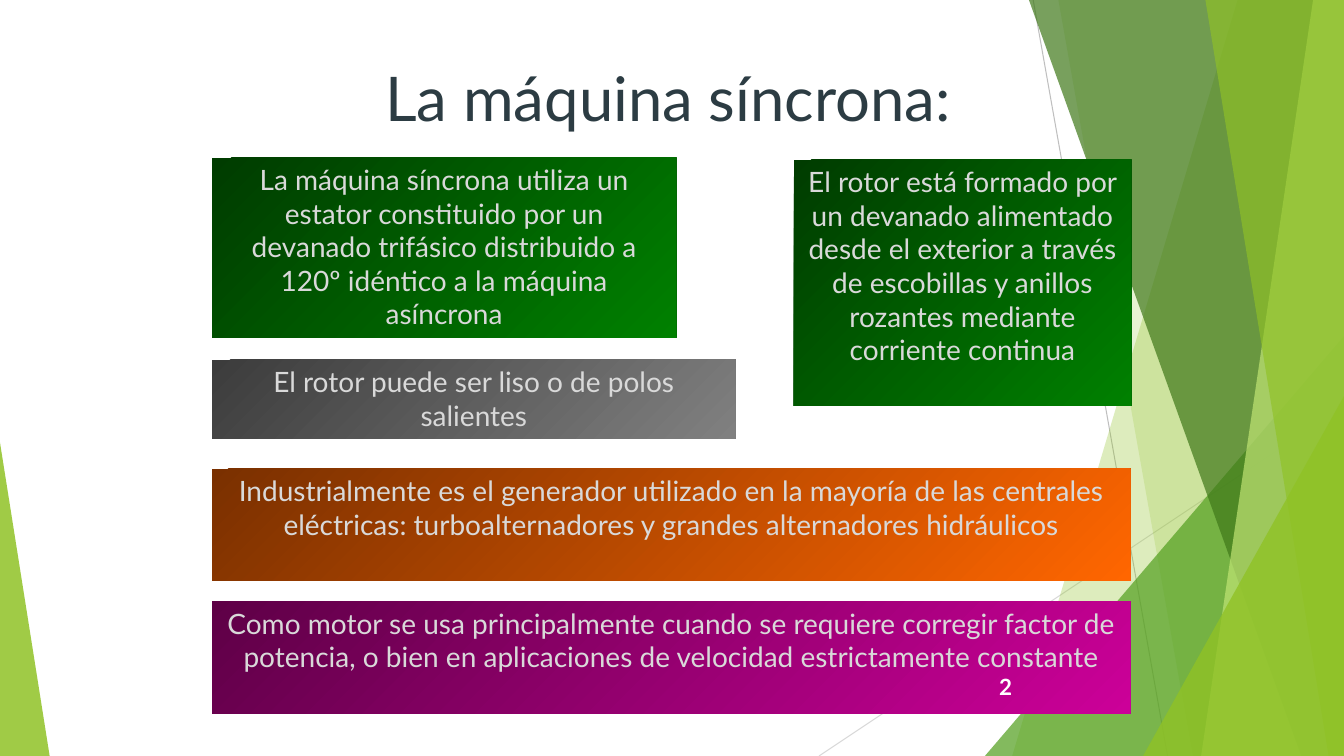
from lxml import etree
from pptx import Presentation
from pptx.dml.color import RGBColor
from pptx.enum.shapes import MSO_CONNECTOR, MSO_SHAPE
from pptx.enum.text import MSO_ANCHOR, PP_ALIGN
from pptx.oxml.ns import qn
from pptx.util import Pt

STRAIGHT = MSO_CONNECTOR.STRAIGHT
RECTANGLE, TRIANGLE = MSO_SHAPE.RECTANGLE, MSO_SHAPE.ISOSCELES_TRIANGLE
TOP, MIDDLE = MSO_ANCHOR.TOP, MSO_ANCHOR.MIDDLE
CENTER, RIGHT = PP_ALIGN.CENTER, PP_ALIGN.RIGHT

WIDTH, HEIGHT = 960, 540
FONT = "Lato"
COLORS = {
    "title": "2C3C43", "body": "D9D9D9", "number": "FFFFFF",
    "ray": "BFBFBF", "pale_ray": "D9D9D9",
    "lime": "90C226", "leaf": "54A021", "forest": "3F7819", "mint": "C0E474",
    "green_dark": "003C00", "green": "008000",
    "gray_dark": "3C3C3C", "gray": "808080",
    "orange_dark": "7A3000", "orange": "FF6600",
    "purple_dark": "5E0046", "purple": "CC0099",
}


class SlideBuilder:
    def __init__(self, slide):
        self.shapes = slide.shapes

    def color(self, name):
        return RGBColor.from_string(COLORS[name])

    def tint(self, shape, color, opacity):
        shape.shadow.inherit = False
        shape.line.fill.background()
        shape.fill.solid()
        shape.fill.fore_color.rgb = self.color(color)
        srgb = shape._element.spPr.find(".//" + qn("a:srgbClr"))
        etree.SubElement(srgb, qn("a:alpha"), val=str(opacity * 1000))

    def ray(self, x1, y1, x2, y2, color):
        ray = self.shapes.add_connector(STRAIGHT, Pt(x1), Pt(y1), Pt(x2), Pt(y2))
        ray.line.color.rgb = self.color(color)
        ray.line.width = Pt(0.75)
        etree.SubElement(ray._element.spPr, qn("a:effectLst"))

    def band(self, top_x, bottom_x, color, opacity):
        outline = self.shapes.build_freeform(Pt(top_x), 0)
        outline.add_line_segments([
            (Pt(WIDTH), 0), (Pt(WIDTH), Pt(HEIGHT)), (Pt(bottom_x), Pt(HEIGHT)),
        ])
        self.tint(outline.convert_to_shape(), color, opacity)

    def corner(self, left, top, width, apex, color, opacity):
        corner = self.shapes.add_shape(
            TRIANGLE, Pt(left), Pt(top), Pt(width), Pt(HEIGHT - top))
        corner.adjustments[0] = apex
        self.tint(corner, color, opacity)

    def set_text(self, shape, text, size, color, align, anchor, bold=False):
        frame = shape.text_frame
        frame.word_wrap = True
        frame.vertical_anchor = anchor
        paragraph = frame.paragraphs[0]
        paragraph.text = text
        paragraph.alignment = align
        paragraph.font.name = FONT
        paragraph.font.size = Pt(size)
        paragraph.font.bold = bold
        paragraph.font.color.rgb = self.color(color)

    def label(self, left, top, width, height, text, size, color, align, bold=False):
        label = self.shapes.add_textbox(Pt(left), Pt(top), Pt(width), Pt(height))
        self.set_text(label, text, size, color, align, MIDDLE, bold)

    def panel(self, left, top, width, height, hue, text):
        panel = self.shapes.add_shape(
            RECTANGLE, Pt(left), Pt(top), Pt(width), Pt(height))
        panel.shadow.inherit = False
        panel.line.fill.background()
        panel.fill.gradient()
        panel.fill.gradient_angle = 315
        for stop, color in zip(panel.fill.gradient_stops, (hue + "_dark", hue)):
            stop.color.rgb = self.color(color)
        self.set_text(panel, text, 20, "body", CENTER, TOP)


def main():
    deck = Presentation()
    deck.slide_width, deck.slide_height = Pt(WIDTH), Pt(HEIGHT)
    builder = SlideBuilder(deck.slides.add_slide(deck.slide_layouts[6]))

    builder.ray(738, 0, 834, HEIGHT, "ray")
    builder.ray(WIDTH, 290, 585, HEIGHT, "pale_ray")
    builder.band(884, 723, "lime", 30)
    builder.band(756, 852, "lime", 20)
    builder.corner(703.5, 240, 256.5, 1, "leaf", 72)
    builder.band(735, 929.5, "forest", 70)
    builder.band(938, 858, "mint", 70)
    builder.band(861, 949, "lime", 65)
    builder.corner(816.5, 283, 143.5, 1, "lime", 80)
    builder.corner(0, 316, 35.5, 0, "lime", 85)

    builder.label(132, 24, 702, 90, "La máquina síncrona: ", 44, "title", CENTER)

    left, full_width = 151.5, 656
    panels = [
        (left, 112.5, 331.5, 128.5, "green",
         "La máquina síncrona utiliza un estator constituido por un devanado "
         "trifásico distribuido a 120º idéntico a la máquina asíncrona"),
        (567, 114, 241, 176, "green",
         "El rotor está formado por un devanado alimentado desde el exterior a "
         "través de escobillas y anillos rozantes mediante corriente continua"),
        (left, 257, 374, 56, "gray",
         "El rotor puede ser liso o de polos salientes"),
        (left, 335, full_width, 80, "orange",
         "Industrialmente es el generador utilizado en la mayoría de las centrales "
         "eléctricas: turboalternadores y grandes alternadores hidráulicos"),
        (left, 429.5, full_width, 80, "purple",
         "Como motor se usa principalmente cuando se requiere corregir factor de "
         "potencia, o bien en aplicaciones de velocidad estrictamente constante"),
    ]
    for panel in panels:
        builder.panel(*panel)

    builder.label(676, 476, 54, 29, "2", 16, "number", RIGHT, bold=True)
    deck.save("out.pptx")


if __name__ == "__main__":
    main()
